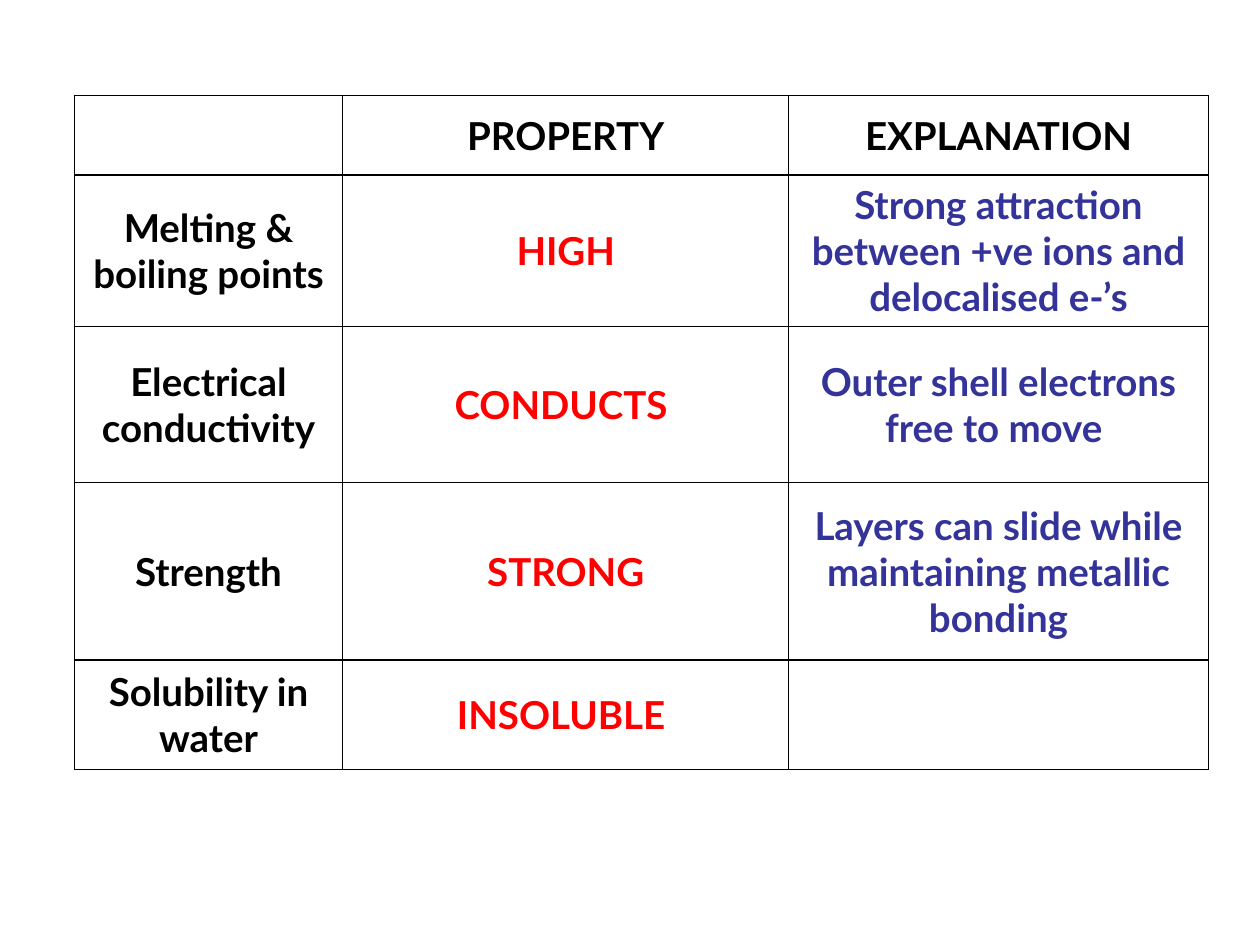
from lxml import etree
from pptx import Presentation
from pptx.dml.color import RGBColor
from pptx.enum.text import MSO_ANCHOR, PP_ALIGN
from pptx.oxml.ns import qn
from pptx.util import Pt

CENTER = PP_ALIGN.CENTER
MIDDLE = MSO_ANCHOR.MIDDLE
BLANK_LAYOUT = 6

FONT = "Lato"
BLACK, RED, BLUE, WHITE = "000000", "FF0000", "333399", "FFFFFF"
COLUMN_COLORS = (BLACK, RED, BLUE)
COLUMN_WIDTHS = (153.36, 254.88, 239.76)
ROW_HEIGHTS = (45.36, 86.4, 89.28, 101.52, 62.64)

# The spaces at the ends of some entries shift their centred text.
ROWS = (
    ("", "PROPERTY", "EXPLANATION"),
    ("Melting & boiling points", "HIGH",
     "Strong attraction between +ve ions and delocalised e-’s"),
    ("Electrical conductivity", "CONDUCTS ",
     "Outer shell electrons free to move "),
    ("Strength", "STRONG",
     "Layers can slide while maintaining metallic bonding"),
    ("Solubility in water", "INSOLUBLE ", ""),
)


def color(hex_string):
    return RGBColor.from_string(hex_string)


def add_borders(cell, hex_string, width):
    properties = cell._tc.get_or_add_tcPr()
    for index, side in enumerate(("a:lnL", "a:lnR", "a:lnT", "a:lnB")):
        line = etree.Element(qn(side), w=str(Pt(width)))
        fill = etree.SubElement(line, qn("a:solidFill"))
        etree.SubElement(fill, qn("a:srgbClr"), val=hex_string)
        properties.insert(index, line)


def format_cell(cell, text, text_color):
    cell.vertical_anchor = MIDDLE
    cell.margin_left = cell.margin_right = Pt(7.2)
    cell.margin_top = cell.margin_bottom = Pt(3.6)
    cell.fill.solid()
    cell.fill.fore_color.rgb = color(WHITE)
    add_borders(cell, BLACK, 1)
    cell.text_frame.text = text
    paragraph = cell.text_frame.paragraphs[0]
    paragraph.alignment = CENTER
    for run in paragraph.runs:
        run.font.name = FONT
        run.font.size = Pt(22)
        run.font.bold = True
        run.font.color.rgb = color(text_color)


def add_property_table(slide, left, top):
    table = slide.shapes.add_table(
        len(ROWS), len(COLUMN_WIDTHS), Pt(left), Pt(top),
        Pt(sum(COLUMN_WIDTHS)), Pt(sum(ROW_HEIGHTS))).table
    table.first_row = True
    table.horz_banding = False
    for column, width in zip(table.columns, COLUMN_WIDTHS):
        column.width = Pt(width)
    for row, height in zip(table.rows, ROW_HEIGHTS):
        row.height = Pt(height)
    for row_index, texts in enumerate(ROWS):
        for column_index, text in enumerate(texts):
            text_color = COLUMN_COLORS[column_index] if row_index else BLACK
            format_cell(table.cell(row_index, column_index), text, text_color)


def main():
    presentation = Presentation()
    presentation.slide_width = Pt(720)
    presentation.slide_height = Pt(540)
    slide = presentation.slides.add_slide(
        presentation.slide_layouts[BLANK_LAYOUT])
    add_property_table(slide, 42.48, 54.72)
    presentation.save("out.pptx")


if __name__ == "__main__":
    main()
